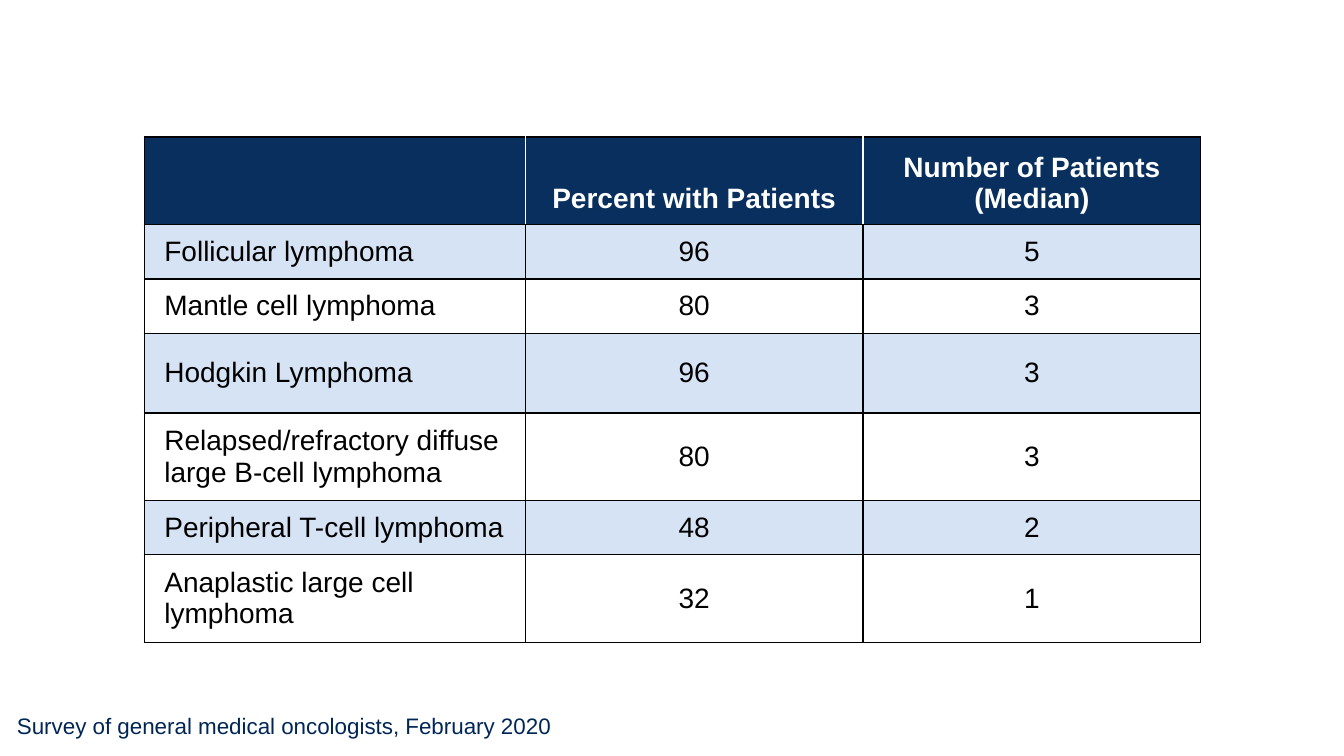
"""Build a slide with a table of lymphoma patients seen by oncologists."""
from lxml.etree import SubElement
from pptx import Presentation
from pptx.dml.color import RGBColor
from pptx.enum.text import MSO_ANCHOR, PP_ALIGN
from pptx.oxml.ns import qn
from pptx.util import Inches, Pt

NAVY = RGBColor(0x08, 0x2F, 0x5D)
NOTE_BLUE = RGBColor(0x00, 0x26, 0x56)
PALE_BLUE = RGBColor(0xD5, 0xE3, 0xF4)
WHITE = RGBColor(0xFF, 0xFF, 0xFF)
BLACK = RGBColor(0x00, 0x00, 0x00)

PATIENT_ROWS = [
    ("", "Percent with Patients", "Number of Patients (Median)"),
    ("Follicular lymphoma", "96", "5"),
    ("Mantle cell lymphoma", "80", "3"),
    ("Hodgkin Lymphoma", "96", "3"),
    ("Relapsed/refractory diffuse large B-cell lymphoma", "80", "3"),
    ("Peripheral T-cell lymphoma", "48", "2"),
    ("Anaplastic large cell lymphoma", "32", "1"),
]
COLUMN_WIDTHS = [3.78, 3.35, 3.35]
ROW_HEIGHTS = [0.86, 0.54, 0.54, 0.79, 0.86, 0.54, 0.86]
CELL_FORMAT = {
    "margin_left": Inches(0.2),
    "margin_right": Inches(0.2),
    "margin_top": Inches(0.1),
    "margin_bottom": Inches(0.1),
}


def set_font(paragraph, size, color, bold=False):
    font_format = {"name": "Arial", "size": Pt(size), "bold": bold}
    for attribute, value in font_format.items():
        setattr(paragraph.font, attribute, value)
    paragraph.font.color.rgb = color


def add_border(cell, side, color):
    line = SubElement(cell._tc.get_or_add_tcPr(), qn(f"a:ln{side}"), w=str(Pt(1)))
    fill = SubElement(line, qn("a:solidFill"))
    SubElement(fill, qn("a:srgbClr"), val=str(color))


presentation = Presentation()
presentation.slide_width = Inches(13.33)
presentation.slide_height = Inches(7.5)
slide = presentation.slides.add_slide(presentation.slide_layouts[6])

survey_note = slide.shapes.add_textbox(Inches(0.07), Inches(7.02), Inches(5.7), Inches(0.37))
survey_note.text_frame.word_wrap = True
survey_note.text_frame.text = "Survey of general medical oncologists, February 2020"
set_font(survey_note.text_frame.paragraphs[0], 16, NOTE_BLUE)

patients = slide.shapes.add_table(
    len(PATIENT_ROWS), len(COLUMN_WIDTHS), Inches(1.43), Inches(1.36),
    Inches(sum(COLUMN_WIDTHS)), Inches(sum(ROW_HEIGHTS))).table
for column, width in zip(patients.columns, COLUMN_WIDTHS):
    column.width = Inches(width)

last_column = len(COLUMN_WIDTHS) - 1
for row, (entries, height) in enumerate(zip(PATIENT_ROWS, ROW_HEIGHTS)):
    patients.rows[row].height = Inches(height)
    is_header = row == 0
    background = NAVY if is_header else PALE_BLUE if row % 2 else WHITE
    for column, entry in enumerate(entries):
        cell = patients.cell(row, column)
        for attribute, value in CELL_FORMAT.items():
            setattr(cell, attribute, value)
        cell.vertical_anchor = MSO_ANCHOR.BOTTOM if is_header else MSO_ANCHOR.MIDDLE
        divider = WHITE if is_header else BLACK
        add_border(cell, "L", divider if column > 0 else BLACK)
        add_border(cell, "R", divider if column < last_column else BLACK)
        add_border(cell, "T", BLACK)
        add_border(cell, "B", BLACK)
        cell.fill.solid()
        cell.fill.fore_color.rgb = background
        cell.text = entry
        paragraph = cell.text_frame.paragraphs[0]
        paragraph.alignment = PP_ALIGN.CENTER if column else PP_ALIGN.LEFT
        set_font(paragraph, 20, WHITE if is_header else BLACK, is_header)

presentation.save("out.pptx")
